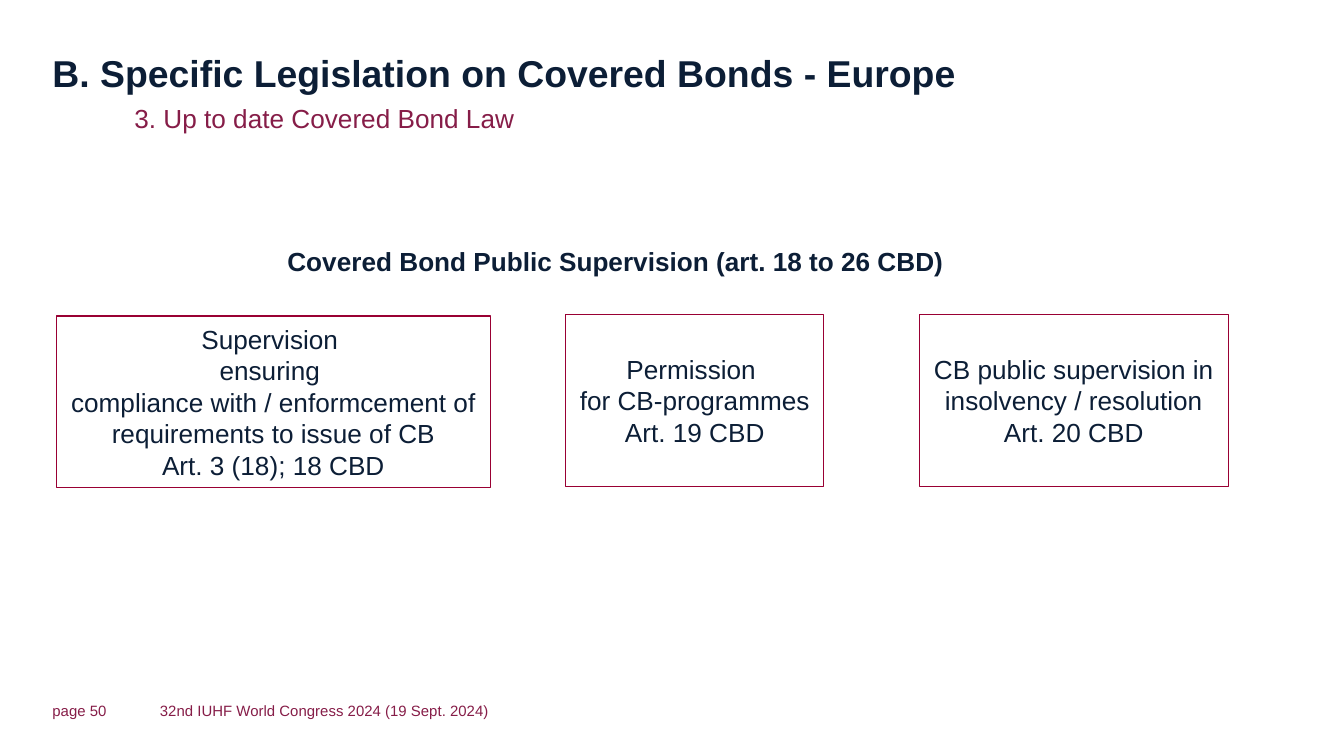
from pptx import Presentation
from pptx import util as u
from pptx.dml.color import RGBColor
from pptx.enum import shapes, text

NAVY = RGBColor(0x0C, 0x1E, 0x36)
WINE = RGBColor(0x86, 0x1D, 0x48)
EDGE = RGBColor(0x99, 0x00, 0x33)
TOP, MID = text.MSO_ANCHOR.TOP, text.MSO_ANCHOR.MIDDLE


def style(frame, size, color, bold=False, align=text.PP_ALIGN.LEFT):
    """Format every paragraph of a text frame."""
    for para in frame.paragraphs:
        para.alignment = align
        for run in para.runs:
            run.font.name = "Arial"
            run.font.size = u.Pt(size)
            run.font.bold = bold
            run.font.color.rgb = color


def label(slide, area, words, size, color, bold=False, anchor=TOP, inset=(0, 0)):
    """Add a line of text in a box."""
    box = slide.shapes.add_textbox(*map(u.Inches, area))
    frame = box.text_frame
    frame.word_wrap = True
    frame.vertical_anchor = anchor
    frame.margin_left = frame.margin_right = u.Inches(inset[0])
    frame.margin_top = frame.margin_bottom = u.Inches(inset[1])
    frame.text = words
    style(frame, size, color, bold)


def card(slide, left, top, width, lines):
    """Add an outlined box with centred lines."""
    area = map(u.Inches, (left, top, width, 1.28))
    box = slide.shapes.add_shape(shapes.MSO_SHAPE.RECTANGLE, *area)
    box.shadow.inherit = False
    box.fill.background()
    box.line.color.rgb = EDGE
    box.line.width = u.Pt(0.75)
    frame = box.text_frame
    frame.word_wrap = False
    frame.vertical_anchor = MID
    frame.text = "\n".join(lines)
    style(frame, 14, NAVY, align=text.PP_ALIGN.CENTER)


def main():
    """Build the slide and save it."""
    deck = Presentation()
    deck.slide_width = u.Inches(10)
    deck.slide_height = deck.slide_width * 9 // 16
    slide = deck.slides.add_slide(deck.slide_layouts[6])

    label(slide, (0.39, 0.37, 9.22, 0.34),
          "B. Specific Legislation on Covered Bonds - Europe", 20, NAVY, True)
    label(slide, (1, 0.76, 5.89, 0.24), "3. Up to date Covered Bond Law", 14, WINE)
    label(slide, (2.04, 1.78, 5.33, 0.34),
          "Covered Bond Public Supervision (art. 18 to 26 CBD)", 14, NAVY, True,
          inset=(0.1, 0.05))

    card(slide, 0.42, 2.35, 3.23, [
        "Supervision ", "ensuring ", "compliance with / enformcement of",
        "requirements to issue of CB", "Art. 3 (18); 18 CBD"])
    card(slide, 4.21, 2.34, 1.92, [
        "Permission ", "for CB-programmes", "Art. 19 CBD"])
    card(slide, 6.84, 2.34, 2.3, [
        "CB public supervision in", "insolvency / resolution", "Art. 20 CBD"])

    label(slide, (0.39, 5.22, 0.63, 0.13), "page 50", 8, WINE, anchor=MID)
    label(slide, (1.19, 5.22, 4.46, 0.13),
          "32nd IUHF World Congress 2024 (19 Sept. 2024)", 8, WINE, anchor=MID)
    deck.save("out.pptx")


if __name__ == "__main__":
    main()
